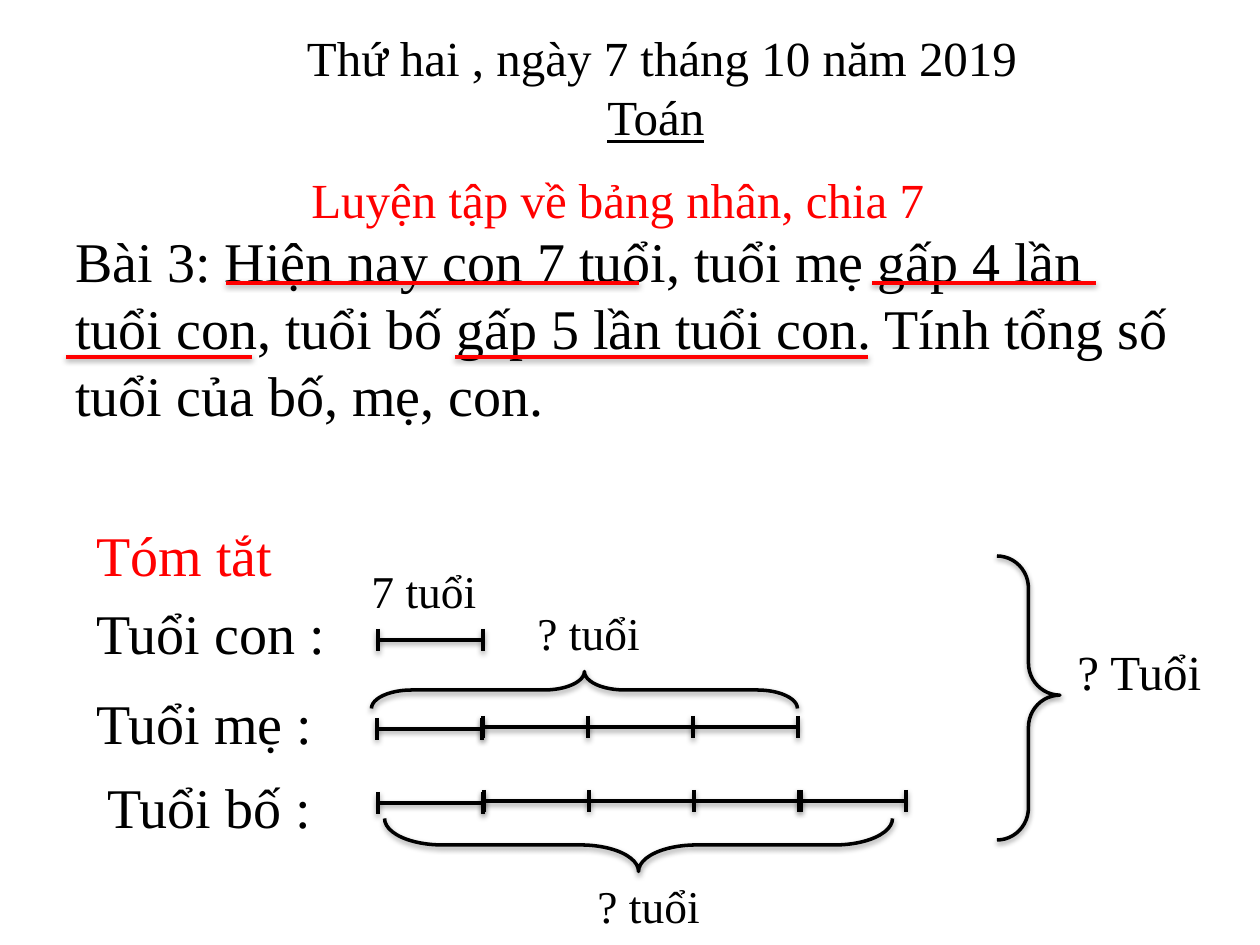
from pptx import Presentation
from pptx import util as u
from pptx.dml.color import RGBColor
from pptx.enum import shapes, text
from pptx.oxml import parse_xml
from pptx.oxml.ns import nsdecls

PX = 914400 / 126
BLACK = RGBColor(0, 0, 0)
RED = RGBColor(255, 0, 0)
FONT = "Times New Roman"
LINE_WIDTH = u.Pt(2)

DATE = "Thứ hai , ngày 7 tháng 10 năm 2019"
SUBJECT = "Toán"
HEADING_BOX = (179, 28, 966, 130)
HEADING_SIZE = 28

# box, size in points, space before as a share of the size, (wording, colour) per paragraph
TEXTS = [
    ((63, 220, 1134, 252), 32, 0.2, [(
        "Bài 3: Hiện nay con 7 tuổi, tuổi mẹ gấp 4 lần "
        "tuổi con, tuổi bố gấp 5 lần tuổi con. Tính tổng số tuổi của bố, mẹ, con.", BLACK)]),
    ((299, 163, 725, 72), 28, 0, [("Luyện tập về bảng nhân, chia 7", RED)]),
    ((84, 514, 262, 168), 32, 0.2, [("Tóm tắt", RED), ("Tuổi con :", BLACK)]),
    ((359, 557, 159, 63), 26, 0.2, [("7 tuổi", BLACK)]),
    ((84, 682, 262, 94), 32, 0.2, [("Tuổi mẹ :", BLACK)]),
    ((95, 766, 262, 94), 32, 0.2, [("Tuổi bố :", BLACK)]),
    ((1065, 635, 159, 126), 28, 0.2, [("? Tuổi", BLACK)]),
    ((525, 599, 159, 73), 26, 0.2, [("? tuổi", BLACK)]),
    ((585, 872, 159, 70), 26, 0.2, [("? tuổi", BLACK)]),
]

# One bar each for child, mother and father, made of runs: left, middle height, units
UNIT = 105
HALF_TICK = 11
BARS = [
    [(378, 640, 1)],
    [(377, 729, 1), (483, 727, 3)],
    [(378, 803, 1), (484, 801, 3), (801, 801, 1)],
]

# box before rotation, rotation, curve and point adjustments
BRACES = [
    ((997, 556, 63, 284), 0, (0.51, 0.49)),
    ((566, 477, 37, 426), 270, (1.09, 0.5)),
    ((612, 591, 53, 508), 90, (1.09, 0.5)),
]

# left, right, height
UNDERLINES = [(226, 639, 283), (872, 1096, 283), (66, 252, 357), (455, 868, 357)]


def px(*lengths):
    return [round(length * PX) for length in lengths]


def style_outline(shape, color):
    """Set the line and the soft shadow below it."""
    shape.line.color.rgb = color
    shape.line.width = LINE_WIDTH
    shape._element.spPr.append(parse_xml(
        f'<a:effectLst {nsdecls("a")}>'
        '<a:outerShdw blurRad="40000" dist="20000" dir="5400000" rotWithShape="0">'
        '<a:srgbClr val="000000"><a:alpha val="38000"/></a:srgbClr>'
        '</a:outerShdw></a:effectLst>'))


def style_run(run, size, color):
    run.font.name, run.font.size, run.font.color.rgb = FONT, u.Pt(size), color


def add_line(parent, x1, y1, x2, y2, color):
    line = parent.add_connector(shapes.MSO_CONNECTOR.STRAIGHT, *px(x1, y1, x2, y2))
    style_outline(line, color)


def add_frame(slide, box):
    frame = slide.shapes.add_textbox(*px(*box)).text_frame
    frame.word_wrap = True
    return frame


def add_text(slide, box, size, spacing, paragraphs):
    frame = add_frame(slide, box)
    frame.text = "\n".join(wording for wording, _ in paragraphs)
    for paragraph, (_, color) in zip(frame.paragraphs, paragraphs):
        paragraph.space_before = u.Pt(round(size * spacing, 1))
        style_run(paragraph.runs[0], size, color)


def add_heading(slide):
    """Centre the date above the subject, whose closing space is not underlined."""
    frame = add_frame(slide, HEADING_BOX)
    frame.margin_top = 0
    paragraph = frame.paragraphs[0]
    paragraph.text = f"{DATE}\v{SUBJECT}"
    paragraph.alignment = text.PP_ALIGN.CENTER
    paragraph.runs[1].font.underline = True
    paragraph.add_run().text = " "
    for run in paragraph.runs:
        style_run(run, HEADING_SIZE, BLACK)


def add_bar(slide, runs):
    group = slide.shapes.add_group_shape()
    for left, y, count in runs:
        ticks = [left + UNIT * i for i in range(count + 1)]
        for start, end in zip(ticks, ticks[1:]):
            add_line(group.shapes, start, y, end, y, BLACK)
        for x in ticks:
            add_line(group.shapes, x, y - HALF_TICK, x, y + HALF_TICK, BLACK)


def add_brace(slide, box, rotation, adjustments):
    brace = slide.shapes.add_shape(shapes.MSO_SHAPE.RIGHT_BRACE, *px(*box))
    brace.rotation = rotation
    for i, value in enumerate(adjustments):
        brace.adjustments[i] = value
    brace.fill.background()
    style_outline(brace, BLACK)


def main():
    presentation = Presentation()
    presentation.slide_width, presentation.slide_height = px(1260, 945)
    slide = presentation.slides.add_slide(presentation.slide_layouts[6])

    add_heading(slide)
    for entry in TEXTS:
        add_text(slide, *entry)
    for runs in BARS:
        add_bar(slide, runs)
    for brace in BRACES:
        add_brace(slide, *brace)
    for left, right, y in UNDERLINES:
        add_line(slide.shapes, left, y, right, y, RED)

    presentation.save("out.pptx")


if __name__ == "__main__":
    main()
